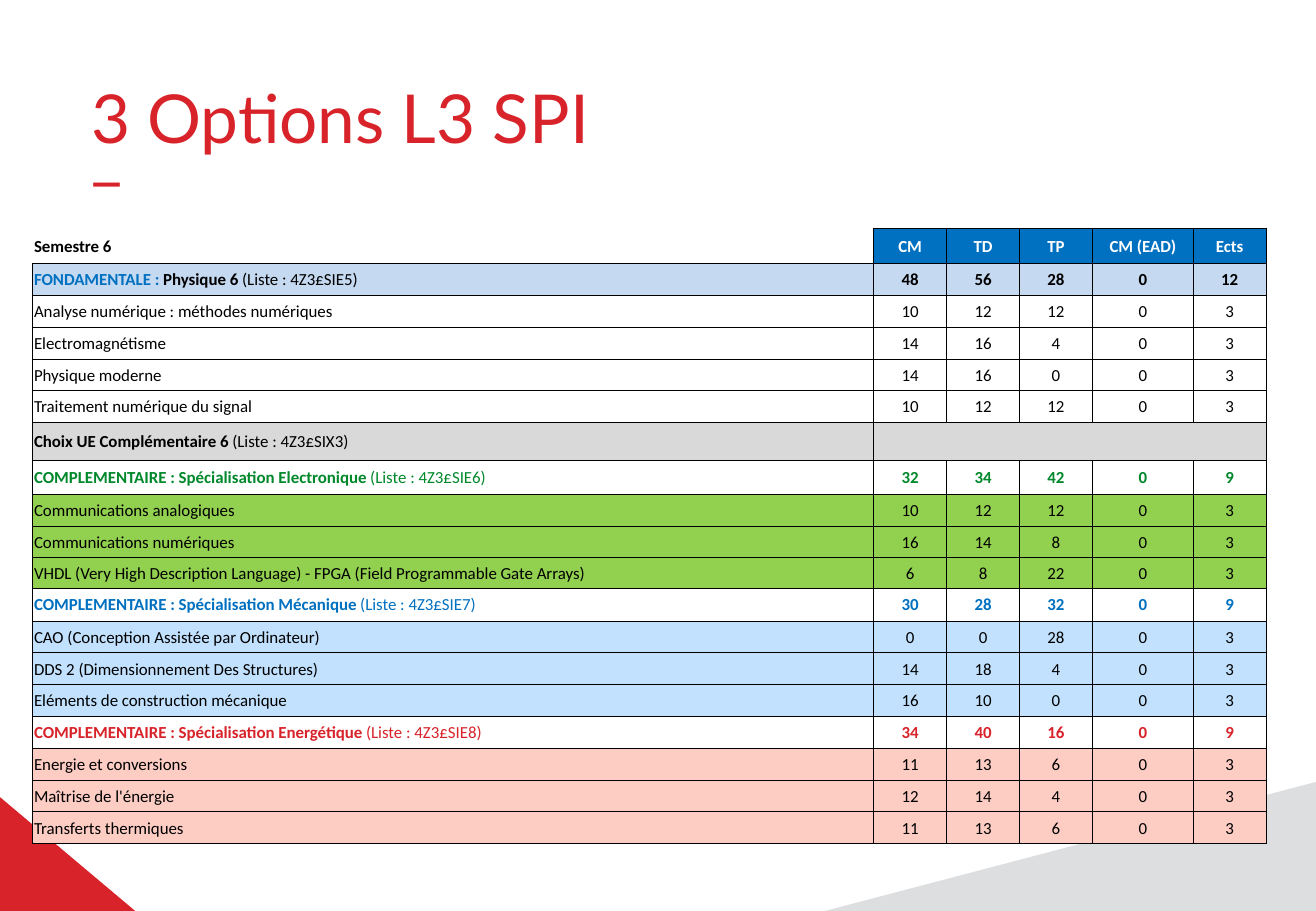
"""Build the slide that lists the three options of the L3 SPI degree."""
from pptx import Presentation
from pptx.dml.color import RGBColor
from pptx.enum.text import MSO_ANCHOR, MSO_AUTO_SIZE, PP_ALIGN
from pptx.oxml import parse_xml
from pptx.oxml.ns import nsdecls
from pptx.util import Inches, Pt

BLACK = RGBColor(0x00, 0x00, 0x00)
WHITE = RGBColor(0xFF, 0xFF, 0xFF)
RED = RGBColor(0xD8, 0x23, 0x2A)
BLUE = RGBColor(0x00, 0x70, 0xC0)
GREEN = RGBColor(0x00, 0x88, 0x2B)
PALE_GREY = RGBColor(0xDC, 0xDE, 0xE0)
GREY = RGBColor(0xD9, 0xD9, 0xD9)
ICE = RGBColor(0xC5, 0xD9, 0xF1)
LIME = RGBColor(0x92, 0xD0, 0x50)
SKY = RGBColor(0xC1, 0xE1, 0xFE)
PINK = RGBColor(0xFD, 0xCD, 0xC4)

TITLE = "3 Options L3 SPI"
SEMESTER = "Semestre 6"
HEADINGS = ["CM", "TD", "TP", "CM (EAD)", "Ects"]
NO_HOURS = [""] * 5

# Each group: heading spans, heading hours, hours colour, heading fill, course fill, courses
GROUPS = [
    ([("FONDAMENTALE : ", BLUE, True), ("Physique 6 ", BLACK, True),
      ("(Liste : 4Z3£SIE5)", BLACK, False)],
     [48, 56, 28, 0, 12], BLACK, ICE, None,
     [("Analyse numérique : méthodes numériques", [10, 12, 12, 0, 3]),
      ("Electromagnétisme", [14, 16, 4, 0, 3]),
      ("Physique moderne", [14, 16, 0, 0, 3]),
      ("Traitement numérique du signal", [10, 12, 12, 0, 3])]),
    ([("Choix UE Complémentaire 6 ", BLACK, True),
      ("(Liste : 4Z3£SIX3)", BLACK, False)],
     NO_HOURS, BLACK, GREY, None, []),
    ([("COMPLEMENTAIRE : Spécialisation Electronique ", GREEN, True),
      ("(Liste : 4Z3£SIE6)", GREEN, False)],
     [32, 34, 42, 0, 9], GREEN, None, LIME,
     [("Communications analogiques", [10, 12, 12, 0, 3]),
      ("Communications numériques", [16, 14, 8, 0, 3]),
      ("VHDL (Very High Description Language) - FPGA (Field Programmable Gate Arrays)",
       [6, 8, 22, 0, 3])]),
    ([("COMPLEMENTAIRE : Spécialisation Mécanique ", BLUE, True),
      ("(Liste : 4Z3£SIE7)", BLUE, False)],
     [30, 28, 32, 0, 9], BLUE, None, SKY,
     [("CAO (Conception Assistée par Ordinateur)", [0, 0, 28, 0, 3]),
      ("DDS 2 (Dimensionnement Des Structures)", [14, 18, 4, 0, 3]),
      ("Eléments de construction mécanique", [16, 10, 0, 0, 3])]),
    ([("COMPLEMENTAIRE : Spécialisation Energétique ", RED, True),
      ("(Liste : 4Z3£SIE8)", RED, False)],
     [34, 40, 16, 0, 9], RED, None, PINK,
     [("Energie et conversions", [11, 13, 6, 0, 3]),
      ("Maîtrise de l'énergie", [12, 14, 4, 0, 3]),
      ("Transferts thermiques", [11, 13, 6, 0, 3])]),
]

CORNERS = [
    (RED, [(-9.72, 7.54), (1.16, 7.54), (-7.79, 0), (-9.74, 0)]),
    (PALE_GREY, [(13.9, 5.63), (2.34, 8.67), (2.3, 9.71), (13.92, 9.71)]),
]

TABLE_BOX = (0.27, 1.88, 10.15, 5.02)
COLUMN_WIDTHS = [6.92, 0.6, 0.6, 0.6, 0.83, 0.6]
SPECIAL_HEIGHTS = {0: 0.29, 7: 0.28, 10: 0.25, 11: 0.27}


def add_span(para, text, font, size, color, bold=False):
    span = para.add_run()
    span.text = text
    span.font.name = font
    span.font.size = Pt(size)
    span.font.bold = bold
    span.font.color.rgb = color


def add_corner(page, color, points):
    start, *others = [(Inches(x), Inches(y)) for x, y in points]
    builder = page.shapes.build_freeform(*start)
    builder.add_line_segments(others, close=True)
    corner = builder.convert_to_shape()
    corner.shadow.inherit = False
    corner.fill.solid()
    corner.fill.fore_color.rgb = color
    corner.line.fill.background()


def add_title(page):
    box = page.shapes.title
    box.left, box.top, box.width, box.height = map(Inches, (0.72, 0.6, 10.11, 1.09))
    frame = box.text_frame
    frame.word_wrap = True
    frame.auto_size = MSO_AUTO_SIZE.SHAPE_TO_FIT_TEXT
    frame.vertical_anchor = MSO_ANCHOR.TOP
    frame.margin_left = frame.margin_right = Inches(0.03)
    frame.margin_top = frame.margin_bottom = Inches(0.03)
    heading, dash = frame.paragraphs[0], frame.add_paragraph()
    dash.line_spacing = Pt(19.9)
    for para, text in ((heading, TITLE), (dash, "_")):
        para.alignment = PP_ALIGN.LEFT
        add_span(para, text, "Lato", 40, RED)


def set_borders(cell, sides):
    for side in "LRTB":
        paint = f'<a:solidFill><a:srgbClr val="{BLACK}"/></a:solidFill>'
        if side not in sides:
            paint = "<a:noFill/>"
        cell._tc.get_or_add_tcPr().append(parse_xml(
            f'<a:ln{side} {nsdecls("a")} w="6350">{paint}</a:ln{side}>'))


def fill_cell(cell, spans, fill, alignment, sides):
    set_borders(cell, sides)
    if fill is None:
        cell.fill.background()
    else:
        cell.fill.solid()
        cell.fill.fore_color.rgb = fill
    cell.vertical_anchor = MSO_ANCHOR.MIDDLE
    cell.margin_left = cell.margin_right = cell.margin_top = Inches(0.01)
    cell.margin_bottom = 0
    para = cell.text_frame.paragraphs[0]
    para.alignment = alignment
    for text, color, bold in spans:
        add_span(para, text, "Calibri", 10, color, bold)


def table_rows():
    yield [(SEMESTER, BLACK, True)], None, HEADINGS, WHITE, True, BLUE
    for spans, hours, color, heading_fill, course_fill, courses in GROUPS:
        yield spans, heading_fill, hours, color, True, heading_fill
        for name, course_hours in courses:
            yield ([(name, BLACK, False)], course_fill,
                   course_hours, BLACK, False, course_fill)


def hour_sides(hours, column):
    if hours is not NO_HOURS:
        return "LRTB"
    return "TB" + {1: "L", len(hours): "R"}.get(column, "")


def add_course_table(page):
    rows = list(table_rows())
    table = page.shapes.add_table(
        len(rows), len(COLUMN_WIDTHS), *map(Inches, TABLE_BOX)).table
    table.first_row = table.horz_banding = False
    for column, width in zip(table.columns, COLUMN_WIDTHS):
        column.width = Inches(width)
    usual_height = ((TABLE_BOX[3] - sum(SPECIAL_HEIGHTS.values()))
                    / (len(rows) - len(SPECIAL_HEIGHTS)))
    for index, (spans, label_fill, hours, color, bold, fill) in enumerate(rows):
        table.rows[index].height = Inches(SPECIAL_HEIGHTS.get(index, usual_height))
        label_sides = "LRTB" if index else "RB"
        fill_cell(table.cell(index, 0), spans, label_fill, PP_ALIGN.LEFT, label_sides)
        for column, value in enumerate(hours, 1):
            fill_cell(table.cell(index, column), [(str(value), color, bold)], fill,
                      PP_ALIGN.CENTER, hour_sides(hours, column))


def main():
    deck = Presentation()
    deck.slide_width, deck.slide_height = Inches(10.83), Inches(7.5)
    page = deck.slides.add_slide(deck.slide_layouts[5])
    for color, points in CORNERS:
        add_corner(page, color, points)
    add_title(page)
    add_course_table(page)
    deck.save("out.pptx")


if __name__ == "__main__":
    main()
